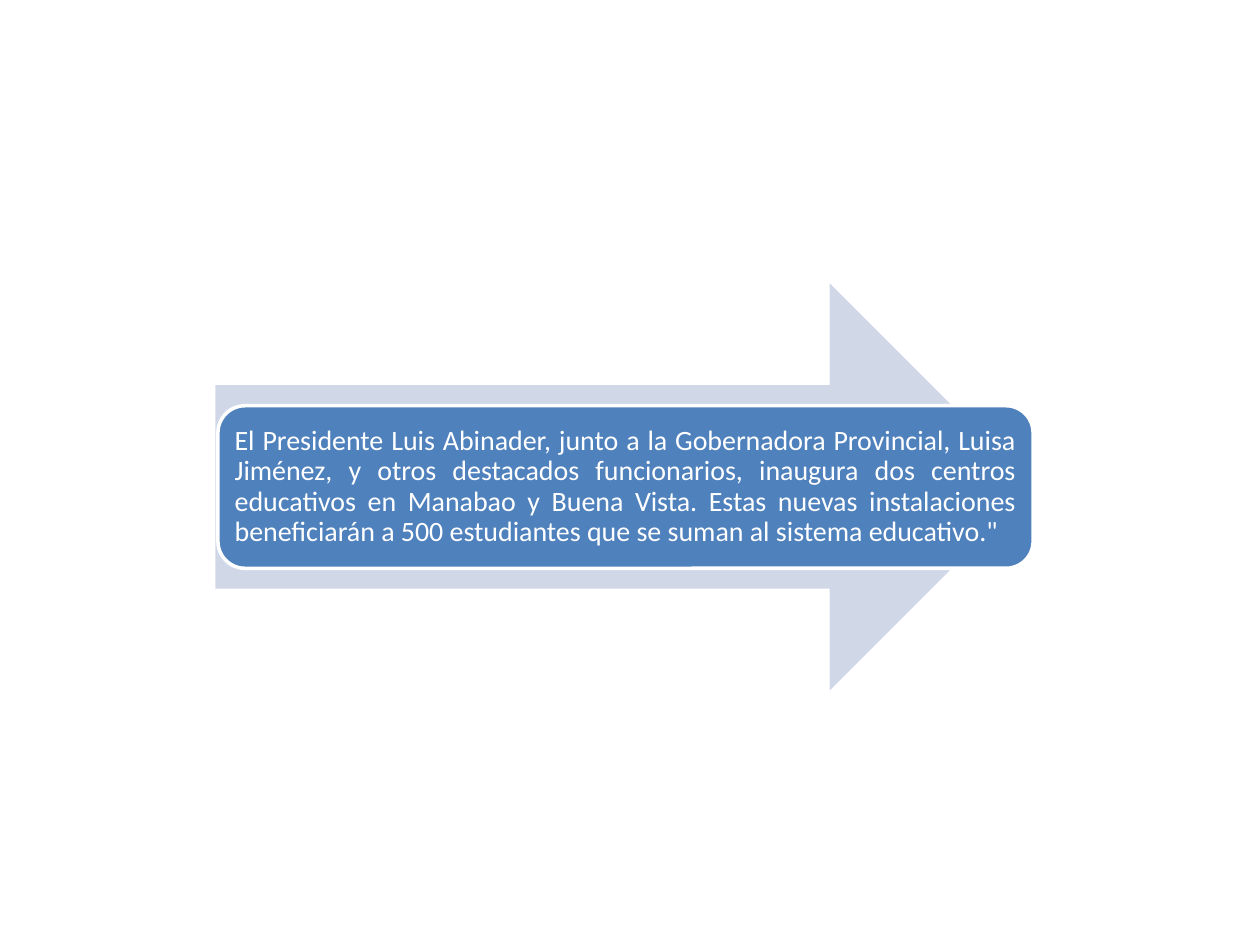
from pptx import Presentation
from pptx import util as u
from pptx.dml.color import RGBColor
from pptx.enum import shapes, text

MESSAGE = (
    "El Presidente Luis Abinader, junto a la Gobernadora Provincial, Luisa Jiménez, "
    "y otros destacados funcionarios, inaugura dos centros educativos en Manabao y "
    "Buena Vista. Estas nuevas instalaciones beneficiarán a 500 estudiantes que se "
    'suman al sistema educativo."'
)
THEME = {"arrow": "D0D8E8", "card": "4F81BD", "white": "FFFFFF",
         "font": "Calibri", "size": 16, "border": 2}
ARROW = (1.71, 2.25, 6.49, 3.23)
CARD_W, CARD_H = 6.47, 1.29
INSET = 0.07


def rgb(name):
    return RGBColor.from_string(THEME[name])


def add_shape(s, kind, box, fill, line=None):
    sp = s.shapes.add_shape(kind, *map(u.Inches, box))
    sp.shadow.inherit = False
    sp.fill.solid()
    sp.fill.fore_color.rgb = rgb(fill)
    if line:
        sp.line.color.rgb = rgb(line)
        sp.line.width = u.Pt(THEME["border"])
    else:
        sp.line.fill.background()
    return sp


def set_text(sp, content, *, color, align, spacing, inset):
    tf = sp.text_frame
    tf.word_wrap = True
    tf.vertical_anchor = text.MSO_ANCHOR.MIDDLE
    tf.margin_left = tf.margin_right = u.Inches(inset)
    tf.margin_top = tf.margin_bottom = u.Inches(inset)
    p = tf.paragraphs[0]
    p.alignment = align
    p.line_spacing = spacing
    r = p.add_run()
    r.text = content
    r.font.name = THEME["font"]
    r.font.size = u.Pt(THEME["size"])
    r.font.color.rgb = rgb(color)


def main():
    prs = Presentation()
    prs.slide_width, prs.slide_height = u.Inches(10), u.Inches(7.5)
    s = prs.slides.add_slide(prs.slide_layouts[6])

    add_shape(s, shapes.MSO_SHAPE.RIGHT_ARROW, ARROW, "arrow")

    # The card ends at the arrow tip and is centred on its shaft.
    x, y, w, h = ARROW
    box = (x + w - CARD_W, y + (h - CARD_H) / 2, CARD_W, CARD_H)
    card = add_shape(s, shapes.MSO_SHAPE.ROUNDED_RECTANGLE, box, "card", line="white")
    set_text(card, MESSAGE, color="white", align=text.PP_ALIGN.JUSTIFY,
             spacing=0.9, inset=INSET)

    prs.save("out.pptx")


if __name__ == "__main__":
    main()
